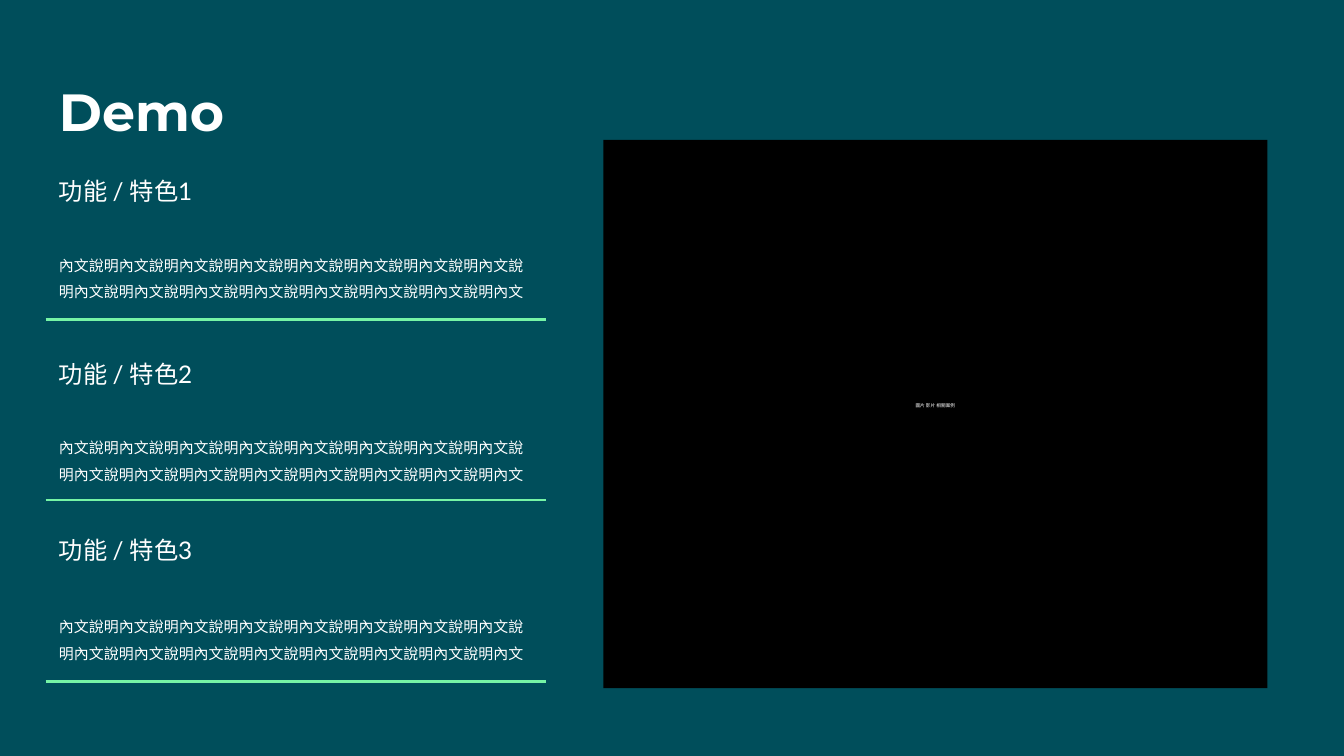
from pptx import Presentation
from pptx.dml.color import RGBColor
from pptx.enum.shapes import MSO_CONNECTOR, MSO_SHAPE
from pptx.enum.text import MSO_ANCHOR, PP_ALIGN
from pptx.oxml.ns import qn
from pptx.util import Inches, Pt
from lxml.etree import SubElement

THEME = {
    "background": "004E5B", "text": "FFFFFF", "rule": "76F4A6", "media": "000000",
    "title_font": "Montserrat", "body_font": "Lato",
    "title": 28, "heading": 13, "description": 8, "caption": 2.5, "rule_width": 1.5,
}

TITLE = "Demo"
CAPTION = "圖片 影片 相關案例"
DESCRIPTION = "內文說明" * 15 + "內文"
FEATURES = [
    {"heading": "功能 / 特色1", "heading_top": 1.21, "description_top": 1.74, "rule_y": 2.38},
    {"heading": "功能 / 特色2", "heading_top": 2.57, "description_top": 3.10, "rule_y": 3.72},
    {"heading": "功能 / 特色3", "heading_top": 3.88, "description_top": 4.43, "rule_y": 5.07},
]

LEFT, RULE_RIGHT = 0.34, 4.06
MEDIA = (4.49, 1.04, 4.94, 4.08)
CAPTION_TOP, CAPTION_WIDTH, CAPTION_HEIGHT = 2.94, 1.57, 0.43


def color(role):
    return RGBColor.from_string(THEME[role])


def add_text(slide, text, box, role, font="body_font", bold=False, align=PP_ALIGN.LEFT,
             line_spacing=None, space_before=0, margin_top=0.1):
    frame = slide.shapes.add_textbox(*map(Inches, box)).text_frame
    frame.word_wrap = True
    frame.vertical_anchor = MSO_ANCHOR.TOP
    frame.margin_left = frame.margin_right = frame.margin_bottom = Inches(0.1)
    frame.margin_top = Inches(margin_top)
    frame.text = text
    paragraph = frame.paragraphs[0]
    paragraph.alignment = align
    paragraph.space_before = Pt(space_before)
    if line_spacing:
        paragraph.line_spacing = line_spacing
    style = paragraph.runs[0].font
    style.name = THEME[font]
    style.size = Pt(THEME[role])
    style.bold = bold
    style.color.rgb = color("text")


def add_rule(slide, y):
    rule = slide.shapes.add_connector(
        MSO_CONNECTOR.STRAIGHT, Inches(LEFT), Inches(y), Inches(RULE_RIGHT), Inches(y))
    rule.line.color.rgb = color("rule")
    rule.line.width = Pt(THEME["rule_width"])
    SubElement(rule._element.spPr, qn("a:effectLst"))


def add_media(slide):
    media = slide.shapes.add_shape(MSO_SHAPE.RECTANGLE, *map(Inches, MEDIA))
    media.shadow.inherit = False
    media.fill.solid()
    media.fill.fore_color.rgb = color("media")
    media.line.fill.background()
    caption_left = MEDIA[0] + (MEDIA[2] - CAPTION_WIDTH) / 2
    add_text(slide, CAPTION, (caption_left, CAPTION_TOP, CAPTION_WIDTH, CAPTION_HEIGHT),
             "caption", align=PP_ALIGN.CENTER, line_spacing=0.8, space_before=20,
             margin_top=0.19)


def add_feature(slide, feature):
    add_text(slide, feature["heading"], (LEFT, feature["heading_top"], 1.4, 0.38),
             "heading", space_before=20)
    add_text(slide, DESCRIPTION, (LEFT, feature["description_top"], 3.71, 0.51),
             "description", line_spacing=1.5)
    add_rule(slide, feature["rule_y"])


def main():
    deck = Presentation()
    deck.slide_width = Inches(10)
    deck.slide_height = deck.slide_width * 9 // 16
    slide = deck.slides.add_slide(deck.slide_layouts[6])
    slide.background.fill.solid()
    slide.background.fill.fore_color.rgb = color("background")
    add_text(slide, TITLE, (LEFT, 0.49, 1.95, 0.63), "title", font="title_font", bold=True)
    add_media(slide)
    for feature in FEATURES:
        add_feature(slide, feature)
    deck.save("out.pptx")


if __name__ == "__main__":
    main()
